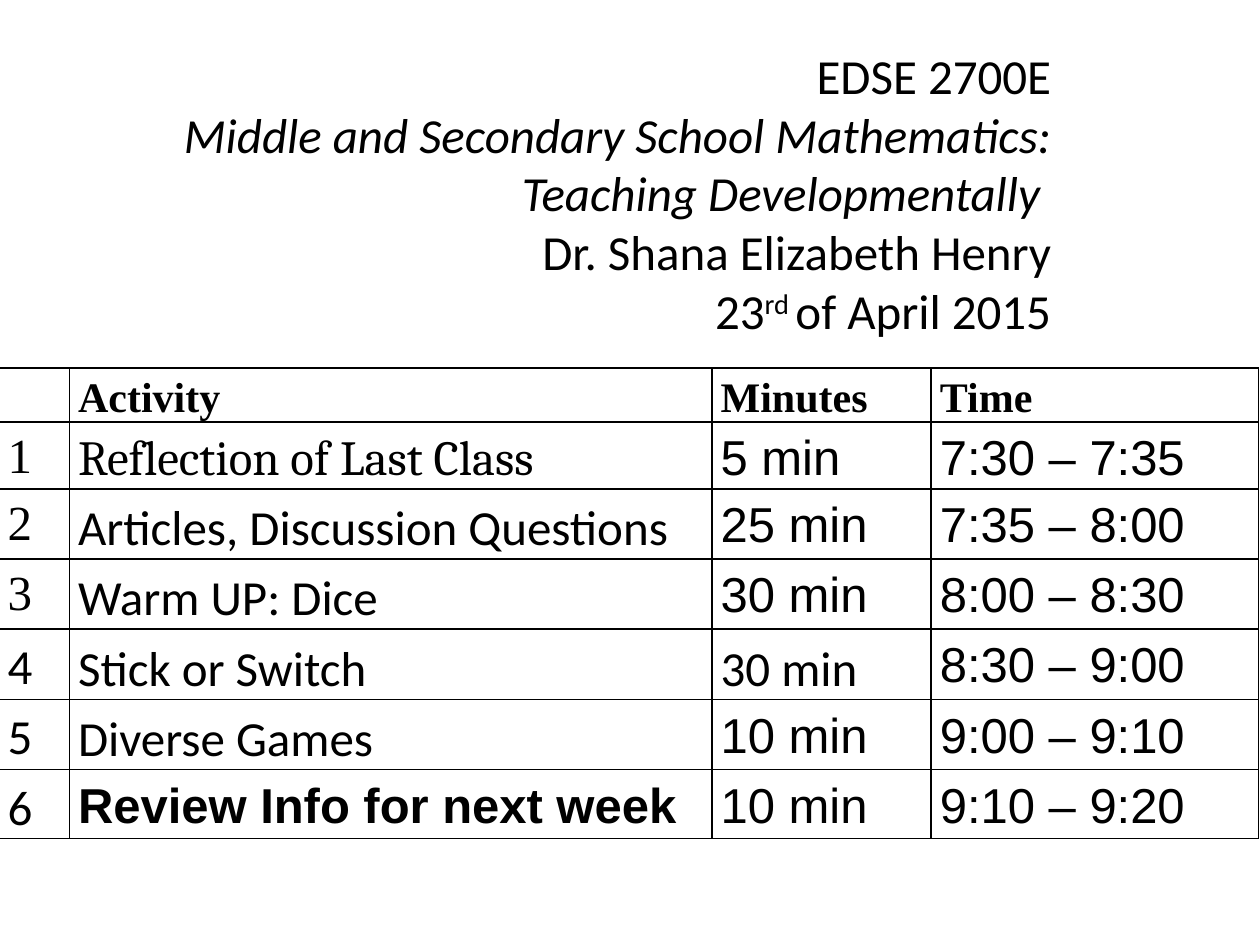
from lxml.etree import SubElement
from pptx import Presentation
from pptx.dml.color import RGBColor
from pptx.enum.text import MSO_AUTO_SIZE, PP_ALIGN
from pptx.oxml.ns import qn
from pptx.util import Inches, Pt

BLACK = RGBColor(0x00, 0x00, 0x00)
SERIF, BOOK, SANS, BODY = "Times New Roman", "Cambria", "Arial", "Calibri"

HEADINGS = ["", "Activity", "Minutes", "Time"]
COLUMN_WIDTHS = [0.56, 5.1, 1.74, 2.6]
HEADING_HEIGHT, FIRST_HEIGHT, ROW_HEIGHT = 0.43, 0.53, 0.55

# Activity, minutes, time, then the fonts of number, activity and minutes
AGENDA = [
    ("Reflection of Last Class", "5 min", "7:30 – 7:35", SERIF, BOOK, SANS),
    ("Articles, Discussion Questions", "25 min", "7:35 – 8:00", SERIF, BODY, SANS),
    ("Warm UP: Dice", "30 min", "8:00 – 8:30", SERIF, BODY, SANS),
    ("Stick or Switch", "30 min", "8:30 – 9:00", BODY, BODY, BODY),
    ("Diverse Games", "10 min", "9:00 – 9:10", BODY, BODY, SANS),
    ("Review Info for next week", "10 min", "9:10 – 9:20", BODY, SANS, SANS),
]
# Activities whose cell has no space after the paragraph
TIGHT = {"Articles, Discussion Questions", "Warm UP: Dice", "Stick or Switch"}

# Each line is a list of (text, italic, superscript)
COURSE_LINES = [
    [("EDSE 2700E", False, False)],
    [("Middle and Secondary School Mathematics: Teaching Developmentally ", True, False)],
    [("Dr. Shana Elizabeth Henry", False, False)],
    [("23", False, False), ("rd ", False, True), ("of April 2015", False, False)],
]


def style_font(font, name, size, bold=False, italic=False):
    font.name, font.size = name, Pt(size)
    font.bold, font.italic = bold, italic
    font.color.rgb = BLACK


def add_borders(cell):
    properties = cell._tc.get_or_add_tcPr()
    for position, side in enumerate(("a:lnL", "a:lnR", "a:lnT", "a:lnB")):
        border = SubElement(properties, qn(side), w=str(Pt(1)))
        fill = SubElement(border, qn("a:solidFill"))
        SubElement(fill, qn("a:srgbClr"), val=str(BLACK))
        properties.insert(position, border)


def fill_cell(cell, text, font, size, bold=False, top=0, space_after=0):
    cell.margin_left = cell.margin_right = Inches(0.07)
    cell.margin_top, cell.margin_bottom = Inches(top), 0
    cell.fill.background()
    add_borders(cell)
    cell.text_frame.text = text
    paragraph = cell.text_frame.paragraphs[0]
    paragraph.line_spacing = 1.15
    paragraph.space_after = Pt(space_after)
    for run in paragraph.runs:
        style_font(run.font, font, size, bold)


def add_agenda(slide, left, top, width, height):
    agenda = slide.shapes.add_table(
        len(AGENDA) + 1, len(HEADINGS), left, top, width, height).table
    agenda.first_row = agenda.horz_banding = False
    for column, column_width in zip(agenda.columns, COLUMN_WIDTHS):
        column.width = Inches(column_width)
    heights = [HEADING_HEIGHT, FIRST_HEIGHT] + [ROW_HEIGHT] * (len(AGENDA) - 1)
    for row, row_height in zip(agenda.rows, heights):
        row.height = Inches(row_height)

    # Heading row
    for column, heading in enumerate(HEADINGS):
        fill_cell(agenda.cell(0, column), heading, SERIF, 24, bold=True)

    # Numbered activities
    for number, entry in enumerate(AGENDA, start=1):
        activity, minutes, time, number_font, activity_font, minutes_font = entry
        fill_cell(agenda.cell(number, 0), str(number), number_font, 28)
        fill_cell(agenda.cell(number, 1), activity, activity_font, 28,
                  bold=number == len(AGENDA), top=0.01,
                  space_after=0 if activity in TIGHT else 10)
        fill_cell(agenda.cell(number, 2), minutes, minutes_font, 28,
                  top=0.01, space_after=10)
        fill_cell(agenda.cell(number, 3), time, SANS, 28, top=0.01, space_after=10)


def add_course_heading(slide, left, top, width, height):
    frame = slide.shapes.add_textbox(left, top, width, height).text_frame
    frame.word_wrap = True
    frame.auto_size = MSO_AUTO_SIZE.SHAPE_TO_FIT_TEXT
    for index, line in enumerate(COURSE_LINES):
        paragraph = frame.add_paragraph() if index else frame.paragraphs[0]
        paragraph.alignment = PP_ALIGN.RIGHT
        for text, italic, superscript in line:
            run = paragraph.add_run()
            run.text = text
            style_font(run.font, BODY, 28, italic=italic)
            if superscript:
                run.font._element.set("baseline", "30000")


def main():
    prs = Presentation()
    prs.slide_width, prs.slide_height = Inches(10), Inches(7.5)
    slide = prs.slides.add_slide(prs.slide_layouts[6])
    add_agenda(slide, Inches(-0.01), Inches(2.92), Inches(10), Inches(3.74))
    add_course_heading(slide, Inches(0.5), Inches(0.31), Inches(7.94), Inches(3.06))
    prs.save("out.pptx")


if __name__ == "__main__":
    main()
